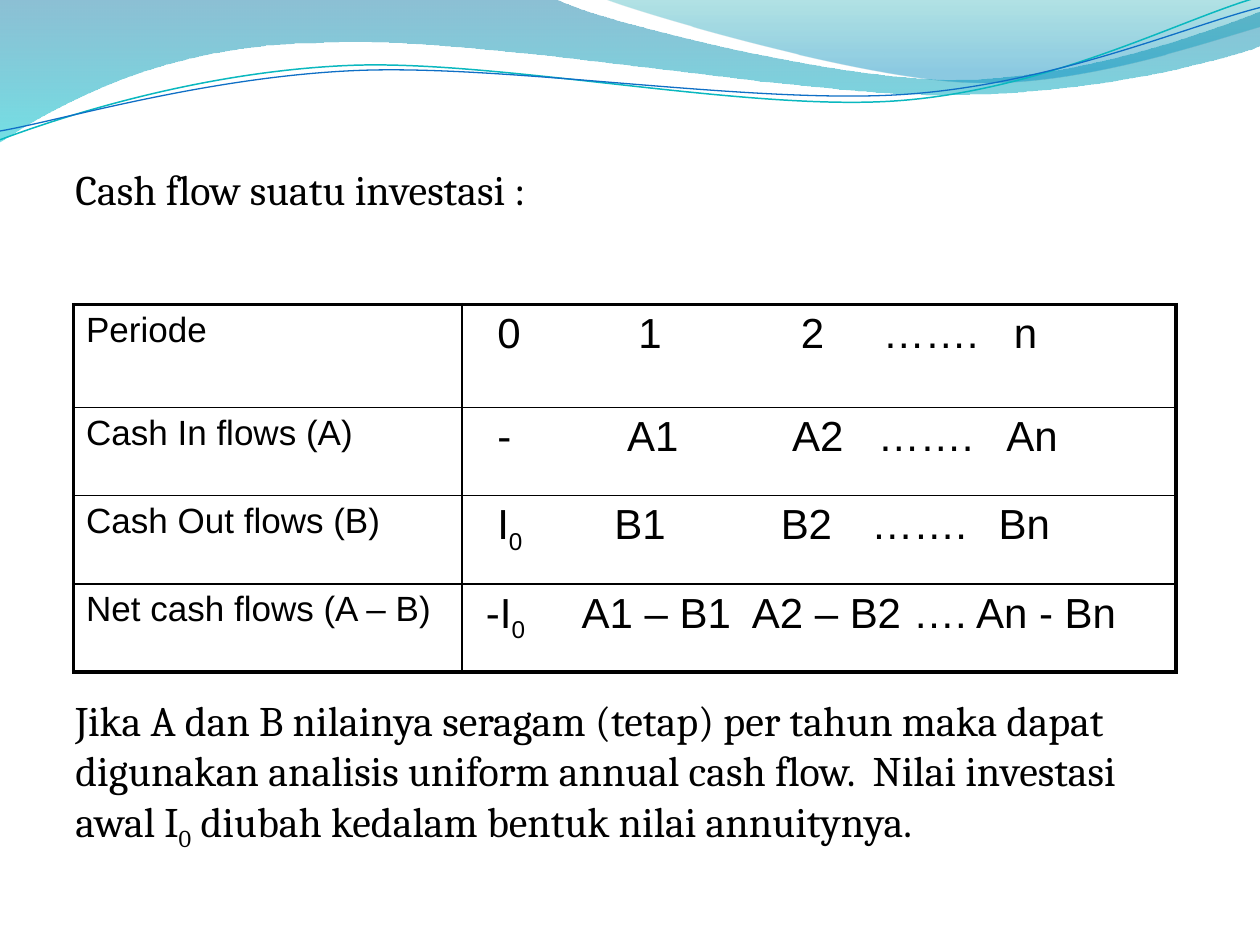
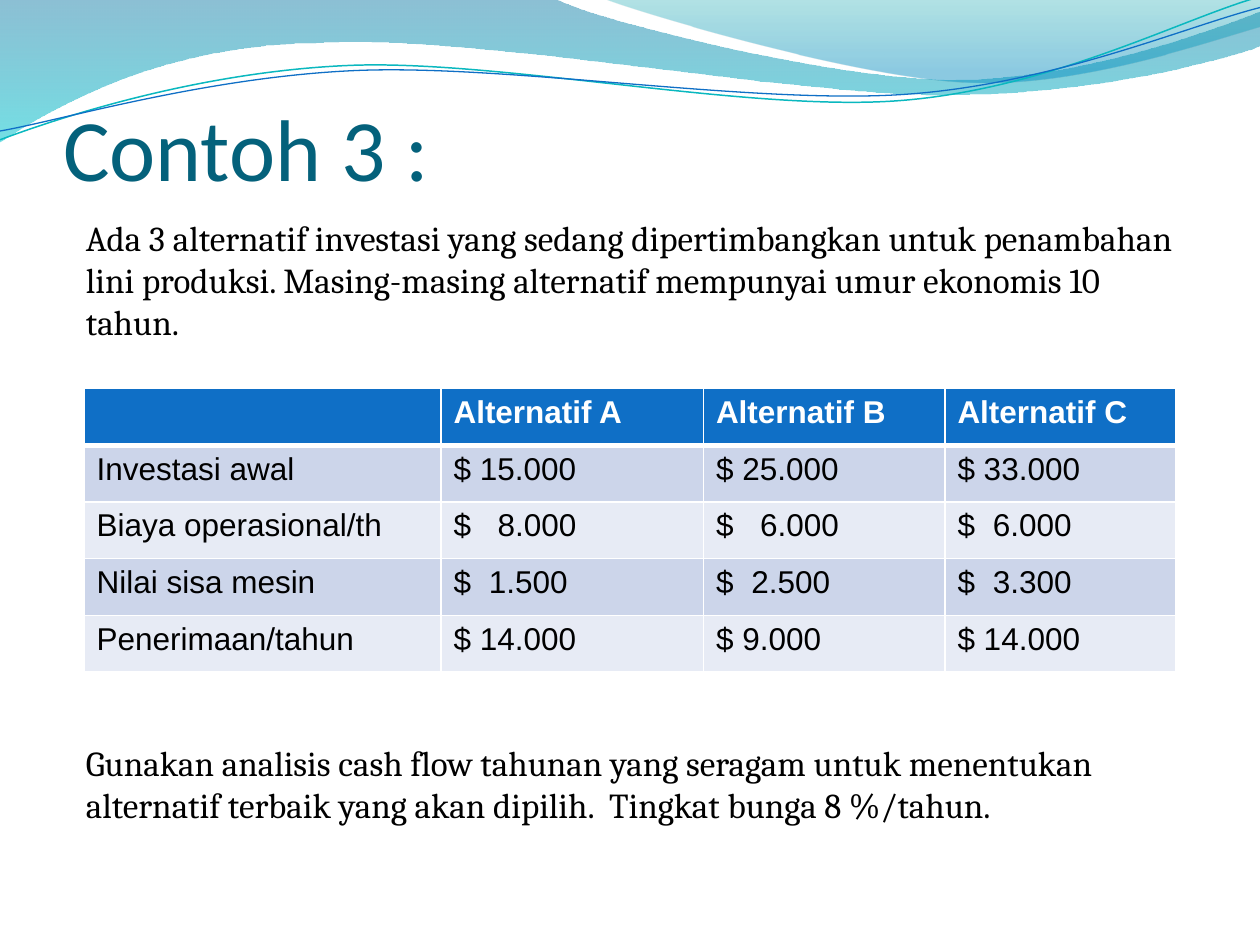
from dataclasses import dataclass
from itertools import islice

from lxml import etree
from pptx import Presentation
from pptx.dml.color import RGBColor
from pptx.enum.text import MSO_ANCHOR, MSO_AUTO_SIZE, PP_ALIGN
from pptx.oxml.ns import qn
from pptx.util import Emu, Inches, Pt

LEFT = PP_ALIGN.LEFT
BOTTOM = MSO_ANCHOR.BOTTOM
NO_AUTOFIT = MSO_AUTO_SIZE.NONE

WIDTH, HEIGHT = Inches(10), Inches(7.5)
GRID_COLUMNS, GRID_ROWS = 120, 90
TITLE_ONLY, BLANK = 5, 6
FIRST_WAVE_ID = 100

Point = tuple[float, float]


@dataclass(frozen=True)
class Theme:
    ink: str = "000000"
    paper: str = "FFFFFF"
    title: str = "04617B"
    header: str = "0F6FC6"
    bands: tuple[str, str] = ("CCD5EA", "E7EBF5")
    title_font: str = "Calibri"
    body_font: str = "Cambria"
    table_font: str = "Arial"
    title_size: float = 50
    lead_size: float = 24
    body_size: float = 20
    period_size: float = 24
    label_size: float = 20
    amount_size: float = 18


THEME = Theme()


@dataclass(frozen=True)
class Area:
    """A rectangle in grid columns and rows."""
    column: float
    row: float
    columns: float
    rows: float

    def box(self) -> tuple[Emu, Emu, Emu, Emu]:
        return across(self.column), down(self.row), across(self.columns), down(self.rows)


@dataclass(frozen=True)
class Tint:
    position: float
    color: str
    opacity: int


@dataclass(frozen=True)
class Wave:
    """A header outline in inches: one point is a straight step, three are a curve."""
    start: Point
    steps: tuple[tuple[Point, ...], ...]
    tints: tuple[Tint, ...] = ()
    line: str = ""
    line_width: float = 0


@dataclass(frozen=True)
class Style:
    font: str
    size: float
    color: str = THEME.ink
    bold: bool = False


@dataclass(frozen=True)
class Explanation:
    """Text above and below a table, with the gap between them in points."""
    area: Area
    above: str
    below: str
    gap: float
    style: Style


@dataclass(frozen=True)
class CashFlow:
    label: str
    periods: str
    stops: tuple[float, ...]


@dataclass(frozen=True)
class Rules:
    """Widths of the table's lines, from top to bottom and from left to right."""
    color: str
    horizontal: tuple[float, ...]
    vertical: tuple[float, ...]


WAVES = (
    Wave((0, -0.01), (
        ((4.4, -0.01),),
        ((4.76, 0.17), (6.64, 0.63), (7.58, 0.63)),
        ((8.53, 0.63), (9.58, 0.26), (10, 0.09)),
        ((10.01, 0.36),),
        ((9.83, 0.44), (8.7, 0.76), (7.46, 0.75)),
        ((6.22, 0.75), (3.82, 0.28), (2.57, 0.34)),
        ((1.29, 0.35), (0.46, 0.83), (-0.01, 1.13)),
        ((0, -0.01),),
    ), tints=(Tint(0, "0074A1", 45), Tint(1, "00C6CF", 55))),
    Wave((4.79, -0.01), (
        ((5.09, 0.11), (6.82, 0.62), (7.69, 0.65)),
        ((8.56, 0.69), (9.61, 0.32), (10, 0.21)),
        ((10, 0),),
        ((4.79, -0.01),),
    ), tints=(Tint(0, "00A1A9", 30), Tint(0.8, "008BBF", 45))),
    Wave((0, 1.11), (
        ((0.48, 0.93), (1.58, 0.57), (2.77, 0.52)),
        ((3.95, 0.47), (5.93, 0.89), (7.13, 0.8)),
        ((8.33, 0.71), (9.38, 0.15), (9.98, -0.02)),
    ), line="0AB8BF", line_width=0.85),
    Wave((0, 1.04), (
        ((0.47, 0.96), (1.64, 0.61), (2.83, 0.56)),
        ((4.03, 0.51), (5.97, 0.83), (7.17, 0.75)),
        ((8.36, 0.67), (9.41, 0.21), (10, 0.06)),
    ), line="0F6FC6", line_width=0.75),
)

# Text between underscores is set as a subscript.
CASH_FLOW_TEXT = Explanation(
    Area(6, 15, 108, 68),
    "Cash flow suatu investasi :",
    "Jika A dan B nilainya seragam (tetap) per tahun maka dapat digunakan analisis "
    "uniform annual cash flow.  Nilai investasi awal I_0_ diubah kedalam bentuk "
    "nilai annuitynya.",
    274.5, Style(THEME.body_font, THEME.lead_size))
CASH_FLOWS = (
    CashFlow("Periode", "\t0\t1\t2\t…….\tn", (0.18, 1.3, 2.59, 3.24, 4.28)),
    CashFlow("Cash In flows (A)", "\t-\tA1\tA2\t…….\tAn", (0.18, 1.21, 2.52, 3.2, 4.22)),
    CashFlow("Cash Out flows (B)", "\tI_0_\tB1\tB2\t…….\tBn",
             (0.18, 1.11, 2.43, 3.15, 4.16)),
    CashFlow("Net cash flows (A – B)", "\t-I_0_\tA1 – B1\tA2 – B2\t….\tAn - Bn",
             (0.09, 0.85, 2.2, 3.48, 3.98)),
)

EXAMPLE_TEXT = Explanation(
    Area(7, 20, 108, 64),
    "Ada 3 alternatif investasi yang sedang dipertimbangkan untuk penambahan lini "
    "produksi. Masing-masing alternatif mempunyai umur ekonomis 10 tahun.",
    "Gunakan analisis cash flow tahunan yang seragam untuk menentukan alternatif "
    "terbaik yang akan dipilih.  Tingkat bunga 8 %/tahun.",
    228, Style(THEME.body_font, THEME.body_size))
ALTERNATIVES = (
    ("", "Alternatif A", "Alternatif B", "Alternatif C"),
    ("Investasi awal", "$ 15.000", "$ 25.000", "$ 33.000"),
    ("Biaya operasional/th", "$\t\t8.000", "$\t\t6.000", "$\t6.000"),
    ("Nilai sisa mesin", "$\t1.500", "$\t2.500", "$\t3.300"),
    ("Penerimaan/tahun", "$ 14.000", "$ 9.000", "$ 14.000"),
)
AMOUNT_STOPS = (0.28, 0.35)


def across(columns: float) -> Emu:
    return Emu(round(WIDTH * columns / GRID_COLUMNS))


def down(rows: float) -> Emu:
    return Emu(round(HEIGHT * rows / GRID_ROWS))


def rgb(color: str) -> RGBColor:
    return RGBColor.from_string(color)


def bend(shape, wave: Wave) -> None:
    """Join the three straight segments of each curved step into one curve."""
    segments = iter(list(shape._element.iter(qn("a:lnTo"))))
    for step in wave.steps:
        first, *others = islice(segments, len(step))
        if others:
            first.tag = qn("a:cubicBezTo")
        for other in others:
            first.append(other[0])
            other.getparent().remove(other)


def draw_wave(slide, wave: Wave):
    points = [(Inches(x), Inches(y)) for step in wave.steps for x, y in step]
    builder = slide.shapes.build_freeform(Inches(wave.start[0]), Inches(wave.start[1]))
    builder.add_line_segments(points, close=bool(wave.tints))
    shape = builder.convert_to_shape()
    bend(shape, wave)
    shape.shadow.inherit = False
    if not wave.tints:
        shape.fill.background()
        shape.line.color.rgb = rgb(wave.line)
        shape.line.width = Pt(wave.line_width)
        return shape
    shape.line.fill.background()
    shape.fill.gradient()
    shape.fill.gradient_angle = 270
    for stop, tint in zip(shape.fill.gradient_stops, wave.tints):
        stop.position = tint.position
        stop.color.rgb = rgb(tint.color)
    colors = shape.fill._xPr.iter(qn("a:srgbClr"))
    for color, tint in zip(colors, wave.tints):
        etree.SubElement(color, qn("a:alpha"), val=str(tint.opacity * 1000))
    return shape


def move_waves_to_master(deck, slide) -> None:
    """Draw the waves on a slide, then hand them to the master all slides share."""
    for i, wave in enumerate(WAVES):
        element = draw_wave(slide, wave)._element
        element.nvSpPr.cNvPr.id = FIRST_WAVE_ID + i
        deck.slide_master.shapes._spTree.append(element)


def set_title(slide, text: str, area: Area) -> None:
    title = slide.shapes.title
    title.left, title.top, title.width, title.height = area.box()
    frame = title.text_frame
    frame.auto_size = NO_AUTOFIT
    frame.vertical_anchor = BOTTOM
    frame.margin_left = frame.margin_right = frame.margin_bottom = 0
    write(frame.paragraphs[0], text, Style(THEME.title_font, THEME.title_size, THEME.title))


def write(paragraph, text: str, style: Style, stops: tuple[float, ...] = ()) -> None:
    paragraph.alignment = LEFT
    if "\t" in text:
        tabs = etree.SubElement(paragraph._p.get_or_add_pPr(), qn("a:tabLst"))
        for stop in stops:
            etree.SubElement(tabs, qn("a:tab"), pos=str(Inches(stop)), algn="l")
    font = paragraph.font
    font.name, font.size, font.bold = style.font, Pt(style.size), style.bold
    font.color.rgb = rgb(style.color)
    for i, part in enumerate(text.split("_")):
        run = paragraph.add_run()
        run.text = part
        if i % 2:
            run.font._element.set("baseline", "-25000")


def add_explanation(slide, explanation: Explanation) -> None:
    frame = slide.shapes.add_textbox(*explanation.area.box()).text_frame
    frame.word_wrap = True
    write(frame.paragraphs[0], explanation.above, explanation.style)
    below = frame.add_paragraph()
    below.space_before = Pt(explanation.gap)
    write(below, explanation.below, explanation.style)


def add_grid(slide, column: float, row: float, widths: tuple[float, ...],
             heights: tuple[float, ...], rules: Rules):
    """Add an unfilled table whose lines follow the rules."""
    area = Area(column, row, sum(widths), sum(heights))
    table = slide.shapes.add_table(len(heights), len(widths), *area.box()).table
    table.first_row = table.horz_banding = False
    for table_column, width in zip(table.columns, widths):
        table_column.width = across(width)
    for r, height in enumerate(heights):
        table.rows[r].height = down(height)
        for c in range(len(widths)):
            cell = table.cell(r, c)
            cell.fill.background()
            sides = {"a:lnL": rules.vertical[c], "a:lnR": rules.vertical[c + 1],
                     "a:lnT": rules.horizontal[r], "a:lnB": rules.horizontal[r + 1]}
            for i, (side, width) in enumerate(sides.items()):
                line = etree.Element(qn(side), w=str(Pt(width)))
                solid = etree.SubElement(line, qn("a:solidFill"))
                etree.SubElement(solid, qn("a:srgbClr"), val=rules.color)
                cell._tc.get_or_add_tcPr().insert(i, line)
    return table


def build_cash_flow(slide) -> None:
    add_explanation(slide, CASH_FLOW_TEXT)
    rules = Rules(THEME.ink, (2.25, 1, 1, 1, 2.25), (2.25, 1, 2.25))
    table = add_grid(slide, 7, 29, (37, 68), (9.8, 8.4, 8.4, 8.4), rules)
    label_style = Style(THEME.table_font, THEME.label_size)
    period_style = Style(THEME.table_font, THEME.period_size)
    for r, flow in enumerate(CASH_FLOWS):
        label, periods = (table.cell(r, c).text_frame.paragraphs[0] for c in (0, 1))
        write(label, flow.label, label_style)
        write(periods, flow.periods, period_style, flow.stops)


def build_example(slide) -> None:
    set_title(slide, "Contoh 3 :", Area(6, 4, 108, 15))
    add_explanation(slide, EXAMPLE_TEXT)
    rules = Rules(THEME.paper, (1, 3, 1, 1, 1, 1), (1,) * 5)
    table = add_grid(slide, 8, 37, (34, 25, 23, 22), (5.4,) * len(ALTERNATIVES), rules)
    table.first_row = True
    header = Style(THEME.table_font, THEME.amount_size, THEME.paper, bold=True)
    amount = Style(THEME.table_font, THEME.amount_size)
    for r, values in enumerate(ALTERNATIVES):
        for c, value in enumerate(values):
            cell = table.cell(r, c)
            cell.fill.solid()
            cell.fill.fore_color.rgb = rgb(THEME.bands[(r - 1) % 2] if r else THEME.header)
            write(cell.text_frame.paragraphs[0], value, amount if r else header, AMOUNT_STOPS)


def main() -> None:
    deck = Presentation()
    deck.slide_width, deck.slide_height = WIDTH, HEIGHT
    cash_flow, example = (deck.slides.add_slide(deck.slide_layouts[layout])
                          for layout in (BLANK, TITLE_ONLY))
    move_waves_to_master(deck, cash_flow)
    build_cash_flow(cash_flow)
    build_example(example)
    deck.save("out.pptx")


if __name__ == "__main__":
    main()
